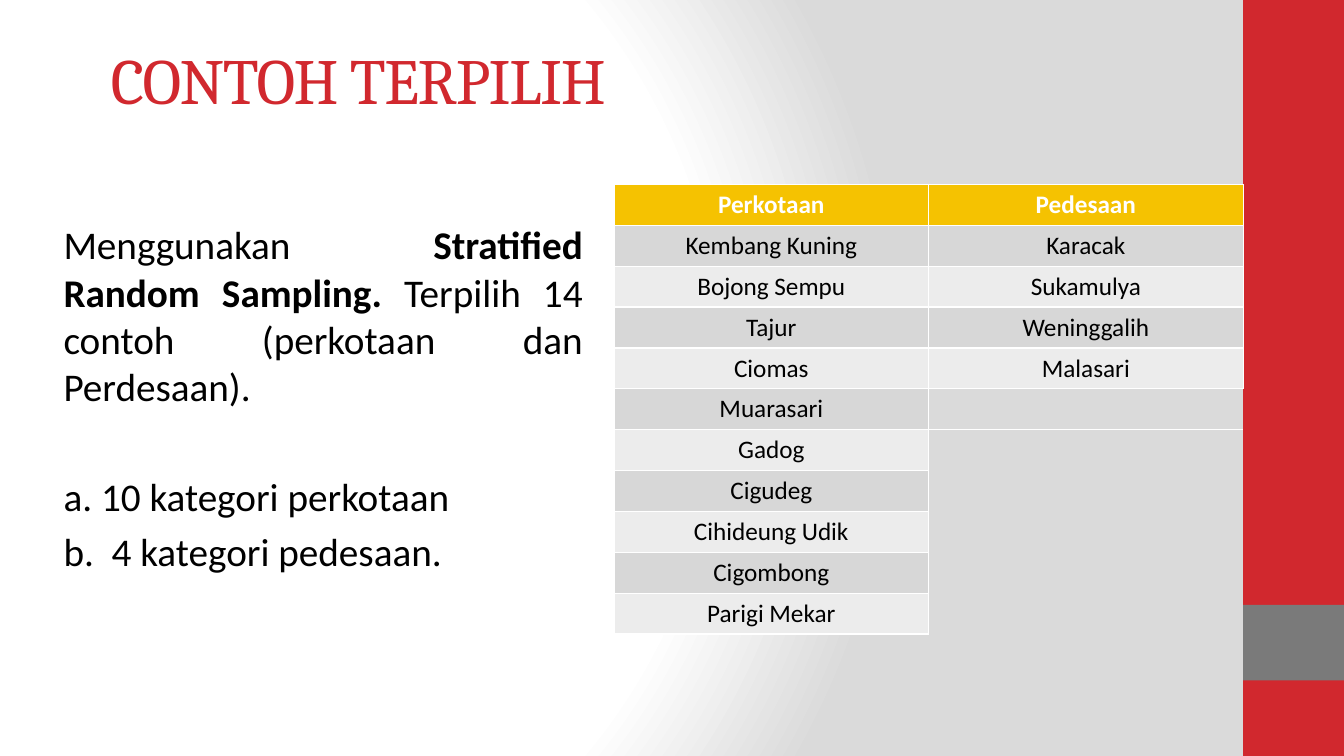
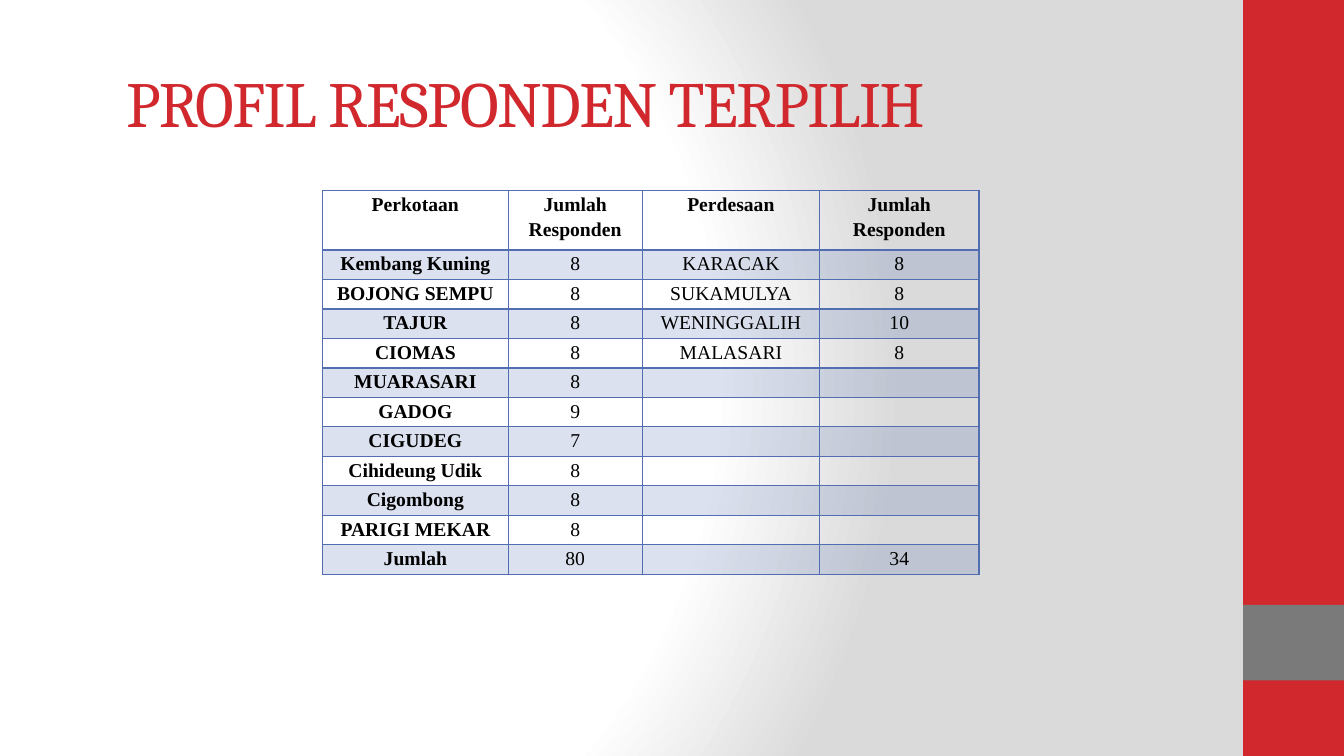
"""Build two slides on the selected sample villages and their respondents."""
import lxml.etree
import pptx
import pptx.dml.color
import pptx.enum.shapes
import pptx.enum.text
import pptx.oxml
import pptx.oxml.ns
import pptx.util

Inches = pptx.util.Inches
Pt = pptx.util.Pt
RGBColor = pptx.dml.color.RGBColor
ALIGN = pptx.enum.text.PP_ALIGN
ANCHOR = pptx.enum.text.MSO_ANCHOR
qn = pptx.oxml.ns.qn

RED = RGBColor(0xD1, 0x28, 0x2E)
GRAY = RGBColor(0x7A, 0x7A, 0x7A)
SILVER = RGBColor(0xDA, 0xDA, 0xDA)
GOLD = RGBColor(0xF5, 0xC2, 0x01)
DARK_BAND = RGBColor(0xD7, 0xD7, 0xD7)
LIGHT_BAND = RGBColor(0xEC, 0xEC, 0xEC)
BLUE = RGBColor(0x52, 0x6D, 0xB0)
BLACK = RGBColor(0, 0, 0)
WHITE = RGBColor(0xFF, 0xFF, 0xFF)

TITLE_FONT = {"name": "Cambria", "size": Pt(46), "bold": False}
BODY_FONT = {"name": "Calibri", "size": Pt(28)}
VILLAGE_FONT = {"name": "Calibri", "size": Pt(18)}
RESPONDENT_FONT = {"name": "Times New Roman", "size": Pt(14)}
VILLAGE_CELL = {"vertical_anchor": ANCHOR.MIDDLE}
RESPONDENT_CELL = {
    "vertical_anchor": ANCHOR.TOP,
    "margin_left": Inches(0.07), "margin_right": Inches(0.07),
    "margin_top": 0, "margin_bottom": 0,
}
NO_STYLE = "{2D5ABB26-0587-4C30-8999-92F81FD0307C}"


def apply_format(target, values, color=None):
    for name, value in values.items():
        setattr(target, name, value)
    if color is not None:
        target.color.rgb = color


def format_cell(cell, text, cell_format, font_format, color, borders, border_color):
    apply_format(cell, cell_format)
    paragraph = cell.text_frame.paragraphs[0]
    paragraph.alignment = ALIGN.CENTER
    if text:
        run = paragraph.add_run()
        run.text = text
        apply_format(run.font, font_format, color)
    else:
        end = lxml.etree.SubElement(paragraph._p, qn("a:endParaRPr"))
        end.set("sz", str(int(font_format["size"].pt * 100)))
    properties = cell._tc.get_or_add_tcPr()
    for side in "LRTB":
        if side in borders:
            line = lxml.etree.SubElement(properties, qn(f"a:ln{side}"), w=str(Pt(borders[side])))
            paint = lxml.etree.SubElement(line, qn("a:solidFill"))
            lxml.etree.SubElement(paint, qn("a:srgbClr"), val=str(border_color))


prs = pptx.Presentation()
prs.slide_width = Inches(13.33)
prs.slide_height = Inches(7.5)
sample = prs.slides.add_slide(prs.slide_layouts[1])
profile = prs.slides.add_slide(prs.slide_layouts[5])

master = prs.slide_master
master.background.fill.solid()
background = master.element.find(".//" + qn("p:bgPr"))
stops = "".join(
    f'<a:gs pos="{position}"><a:srgbClr val="{color}"/></a:gs>'
    for position, color in ((0, WHITE), (75000, WHITE), (100000, SILVER))
)
background.replace(background[0], pptx.oxml.parse_xml(
    f'<a:gradFill {pptx.oxml.ns.nsdecls("a")} rotWithShape="1"><a:gsLst>{stops}</a:gsLst>'
    '<a:path path="circle"><a:fillToRect l="20000" t="50000" r="100000" b="50000"/></a:path>'
    "</a:gradFill>"
))
for number, (top, height, color) in enumerate(((0, 7.5, RED), (6, 0.75, GRAY))):
    band = sample.shapes.add_shape(
        pptx.enum.shapes.MSO_SHAPE.RECTANGLE,
        Inches(12.33), Inches(top), Inches(1), Inches(height),
    )
    band.shadow.inherit = False
    band.fill.solid()
    band.fill.fore_color.rgb = color
    band.line.fill.background()
    band.element.nvSpPr.cNvPr.set("id", str(100 + number))
    master.shapes.element.insert(2 + number, band.element)

for slide, heading, left, top, width, height in (
    (sample, "CONTOH TERPILIH", 1, 0.06, 11.32, 1.45),
    (profile, "PROFIL RESPONDEN TERPILIH", 1.15, 0.38, 11.11, 1.25),
):
    title = slide.shapes.title
    apply_format(title, {"left": Inches(left), "top": Inches(top),
                         "width": Inches(width), "height": Inches(height)})
    title.text_frame.vertical_anchor = ANCHOR.MIDDLE
    paragraph = title.text_frame.paragraphs[0]
    paragraph.alignment = ALIGN.LEFT
    run = paragraph.add_run()
    run.text = heading
    apply_format(run.font, TITLE_FONT, RED)
    run.font._element.set("spc", "-100")

method = sample.placeholders[1]
apply_format(method, {"left": Inches(0.53), "top": Inches(1.68),
                      "width": Inches(5.35), "height": Inches(4.04)})
apply_format(method.text_frame, {
    "margin_top": Inches(0.51), "word_wrap": True,
    "vertical_anchor": ANCHOR.TOP, "auto_size": pptx.enum.text.MSO_AUTO_SIZE.NONE,
})
statements = (
    (0, (("Menggunakan ", False), ("Stratified Random Sampling.", True),
         (" Terpilih 14 contoh (perkotaan dan Perdesaan).", False))),
    (45, (("a. 10 kategori perkotaan", False),)),
    (5.6, (("b.  4 kategori pedesaan.", False),)),
)
for number, (gap, parts) in enumerate(statements):
    paragraph = method.text_frame.paragraphs[0] if number == 0 else method.text_frame.add_paragraph()
    apply_format(paragraph, {"alignment": ALIGN.JUSTIFY, "space_before": Pt(gap)})
    properties = paragraph._p.get_or_add_pPr()
    properties.set("marL", "0")
    properties.set("indent", "0")
    lxml.etree.SubElement(properties, qn("a:buNone"))
    for text, bold in parts:
        run = paragraph.add_run()
        run.text = text
        apply_format(run.font, {**BODY_FONT, "bold": bold}, BLACK)

urban = ("Kembang Kuning", "Bojong Sempu", "Tajur", "Ciomas", "Muarasari", "Gadog",
         "Cigudeg", "Cihideung Udik", "Cigombong", "Parigi Mekar")
rural = ("Karacak", "Sukamulya", "Weninggalih", "Malasari")
village_rows = [("Perkotaan", "Pedesaan")]
village_rows += [(name, rural[i] if i < len(rural) else "") for i, name in enumerate(urban)]
respondent_rows = (
    ("Perkotaan", "Jumlah Responden", "Perdesaan", "Jumlah Responden"),
    ("Kembang Kuning", "8", "KARACAK", "8"),
    ("BOJONG SEMPU", "8", "SUKAMULYA", "8"),
    ("TAJUR", "8", "WENINGGALIH", "10"),
    ("CIOMAS", "8", "MALASARI", "8"),
    ("MUARASARI", "8", "", ""),
    ("GADOG", "9", "", ""),
    ("CIGUDEG", "7", "", ""),
    ("Cihideung Udik", "8", "", ""),
    ("Cigombong", "8", "", ""),
    ("PARIGI MEKAR", "8", "", ""),
    ("Jumlah", "80", "", "34"),
)

tables = []
for slide, rows, left, top, widths, header_height, row_height in (
    (sample, village_rows, 6.09, 1.83, (3.12, 3.12), 4.46 / 11, 4.46 / 11),
    (profile, respondent_rows, 3.2, 1.89, (1.84, 1.33, 1.76, 1.58), 0.59, 3.22 / 11),
):
    heights = [header_height] + [row_height] * (len(rows) - 1)
    table = slide.shapes.add_table(
        len(rows), len(widths), Inches(left), Inches(top),
        Inches(sum(widths)), Inches(sum(heights)),
    ).table
    apply_format(table, {"first_row": False, "horz_banding": False})
    table._tbl.tblPr.find(qn("a:tableStyleId")).text = NO_STYLE
    for column, width in zip(table.columns, widths):
        column.width = Inches(width)
    for row, height in zip(table.rows, heights):
        row.height = Inches(height)
    tables.append(table)
villages, respondents = tables

for r, row in enumerate(village_rows):
    for c, text in enumerate(row):
        cell = villages.cell(r, c)
        borders = dict.fromkeys("LRTB", 1) if text else {"L": 1}
        if not text and village_rows[r - 1][c]:
            borders["T"] = 1
        format_cell(cell, text, VILLAGE_CELL, {**VILLAGE_FONT, "bold": r == 0},
                    BLACK if r else WHITE, borders, WHITE)
        if text:
            cell.fill.solid()
            cell.fill.fore_color.rgb = GOLD if r == 0 else DARK_BAND if r % 2 else LIGHT_BAND

for r, row in enumerate(respondent_rows):
    for c, text in enumerate(row):
        cell = respondents.cell(r, c)
        borders = {"L": 1, "R": 1, "T": 2 if r == 1 else 1, "B": 2 if r == 0 else 1}
        format_cell(cell, text, RESPONDENT_CELL,
                    {**RESPONDENT_FONT, "bold": r == 0 or c == 0}, BLACK, borders, BLUE)
        cell.text_frame.paragraphs[0].line_spacing = 1.15
        if r % 2:
            cell.fill.solid()
            cell.fill.fore_color.rgb = BLUE
            tint = cell._tc.tcPr.find(qn("a:solidFill"))[0]
            lxml.etree.SubElement(tint, qn("a:alpha"), val="20000")

prs.save("out.pptx")
